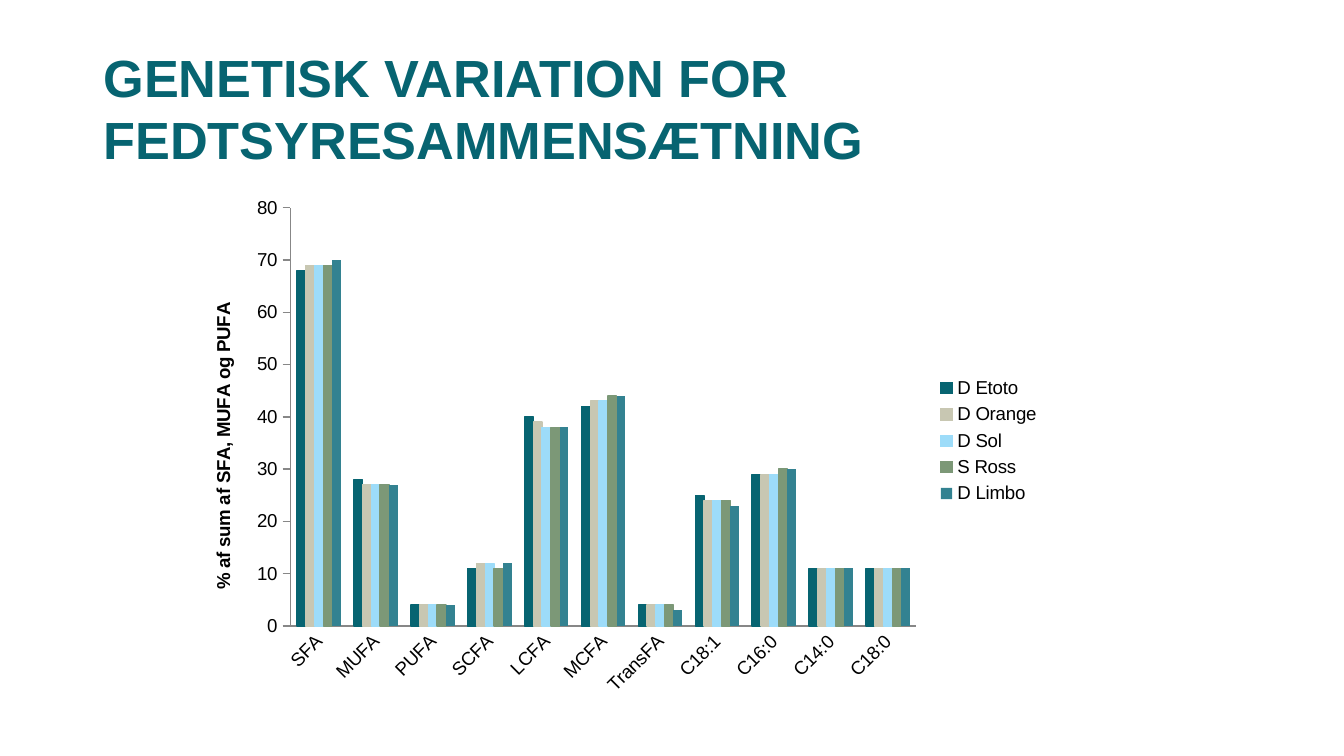
from dataclasses import dataclass

from lxml import etree
from pptx import Presentation
from pptx.chart.axis import CategoryAxis, ValueAxis
from pptx.chart.chart import Chart
from pptx.chart.data import CategoryChartData
from pptx.dml.color import RGBColor
from pptx.enum.chart import XL_CHART_TYPE, XL_LEGEND_POSITION, XL_TICK_MARK
from pptx.enum.text import MSO_ANCHOR, PP_ALIGN
from pptx.oxml.ns import qn
from pptx.slide import Slide
from pptx.util import Inches, Pt

CLUSTERED = XL_CHART_TYPE.COLUMN_CLUSTERED
LEGEND_RIGHT = XL_LEGEND_POSITION.RIGHT
TICK_NONE = XL_TICK_MARK.NONE
TICK_OUTSIDE = XL_TICK_MARK.OUTSIDE
MIDDLE = MSO_ANCHOR.MIDDLE
LEFT = PP_ALIGN.LEFT

FONT = "Arial"
COLORS = {
    "petrol": "076471",
    "sand": "C8C7B2",
    "sky": "9DDCF9",
    "sage": "7C9877",
    "teal": "338291",
    "text": "000000",
    "axis": "878787",
}


@dataclass
class Variety:
    name: str
    color: str
    values: tuple[int, ...]
    outlined: bool = True


FATTY_ACIDS = ("SFA", "MUFA", "PUFA", "SCFA", "LCFA", "MCFA",
               "TransFA", "C18:1", "C16:0", "C14:0", "C18:0")
VARIETIES = (
    Variety("D Etoto", "petrol", (68, 28, 4, 11, 40, 42, 4, 25, 29, 11, 11)),
    Variety("D Orange", "sand", (69, 27, 4, 12, 39, 43, 4, 24, 29, 11, 11)),
    Variety("D Sol", "sky", (69, 27, 4, 12, 38, 43, 4, 24, 29, 11, 11)),
    Variety("S Ross", "sage", (69, 27, 4, 11, 38, 44, 4, 24, 30, 11, 11)),
    Variety("D Limbo", "teal", (70, 27, 4, 12, 38, 44, 3, 23, 30, 11, 11), False),
)


def rgb(name: str) -> RGBColor:
    return RGBColor.from_string(COLORS[name])


def set_title(slide: Slide, text: str) -> None:
    title = slide.shapes.title
    title.left, title.top = Inches(0.67), Inches(0.33)
    title.width, title.height = Inches(8.83), Inches(0.94)
    frame = title.text_frame
    frame.text = text
    frame.word_wrap = True
    frame.vertical_anchor = MIDDLE
    paragraph = frame.paragraphs[0]
    paragraph.alignment = LEFT
    paragraph.font.name = FONT
    paragraph.font.size = Pt(28)
    paragraph.font.bold = True
    paragraph.font.color.rgb = rgb("petrol")


def style_axis(axis: CategoryAxis | ValueAxis, tick_mark: XL_TICK_MARK) -> None:
    axis.has_major_gridlines = False
    axis.major_tick_mark = tick_mark
    axis.minor_tick_mark = TICK_NONE
    axis.format.line.color.rgb = rgb("axis")
    axis.format.line.width = Pt(0.75)
    axis.tick_labels.font.size = Pt(10)


def place_plot(chart: Chart, x: float, y: float, width: float, height: float) -> None:
    plot_area = chart.element.find(".//" + qn("c:plotArea"))
    for old_layout in plot_area.findall(qn("c:layout")):
        plot_area.remove(old_layout)
    layout = etree.Element(qn("c:layout"))
    manual = etree.SubElement(layout, qn("c:manualLayout"))
    settings = {"layoutTarget": "inner", "xMode": "edge", "yMode": "edge",
                "x": x, "y": y, "w": width, "h": height}
    for tag, value in settings.items():
        etree.SubElement(manual, qn(f"c:{tag}")).set("val", str(value))
    plot_area.insert(0, layout)


def add_fatty_acid_chart(slide: Slide) -> None:
    data = CategoryChartData()
    data.categories = FATTY_ACIDS
    for variety in VARIETIES:
        data.add_series(variety.name, variety.values)
    chart = slide.shapes.add_chart(CLUSTERED, Inches(1.46), Inches(1.31),
                                   Inches(6.38), Inches(3.94), data).chart
    chart.has_title = False
    chart.font.name = FONT
    chart.font.size = Pt(10)
    chart.font.color.rgb = rgb("text")
    chart.has_legend = True
    chart.legend.position = LEGEND_RIGHT
    chart.legend.include_in_layout = False

    plot = chart.plots[0]
    plot.gap_width = 150
    plot.overlap = 0
    plot.vary_by_categories = False
    for series, variety in zip(plot.series, VARIETIES):
        series.format.fill.solid()
        series.format.fill.fore_color.rgb = rgb(variety.color)
        if variety.outlined:
            series.format.line.color.rgb = rgb(variety.color)
            series.format.line.width = Pt(0.75)

    style_axis(chart.category_axis, TICK_NONE)
    labels = chart.category_axis._element.find(qn("c:txPr"))
    labels.find(qn("a:bodyPr")).set("rot", "-2700000")

    value_axis = chart.value_axis
    style_axis(value_axis, TICK_OUTSIDE)
    value_axis.minimum_scale, value_axis.maximum_scale = 0, 80
    value_axis.major_unit = 10
    title_frame = value_axis.axis_title.text_frame
    title_frame.text = "% af sum af SFA, MUFA og PUFA"
    paragraph = title_frame.paragraphs[0]
    paragraph.font.name = FONT
    paragraph.font.size = Pt(10)
    paragraph.font.bold = True
    paragraph.font.color.rgb = rgb("text")
    title_frame._txBody.find(qn("a:bodyPr")).set("rot", "-5400000")

    place_plot(chart, 0.11, 0.06, 0.73, 0.79)


def main() -> None:
    presentation = Presentation()
    presentation.slide_width = Inches(10)
    presentation.slide_height = presentation.slide_width * 9 // 16
    slide = presentation.slides.add_slide(presentation.slide_layouts[5])
    set_title(slide, "GENETISK VARIATION FOR FEDTSYRESAMMENSÆTNING")
    add_fatty_acid_chart(slide)
    presentation.save("out.pptx")


if __name__ == "__main__":
    main()
